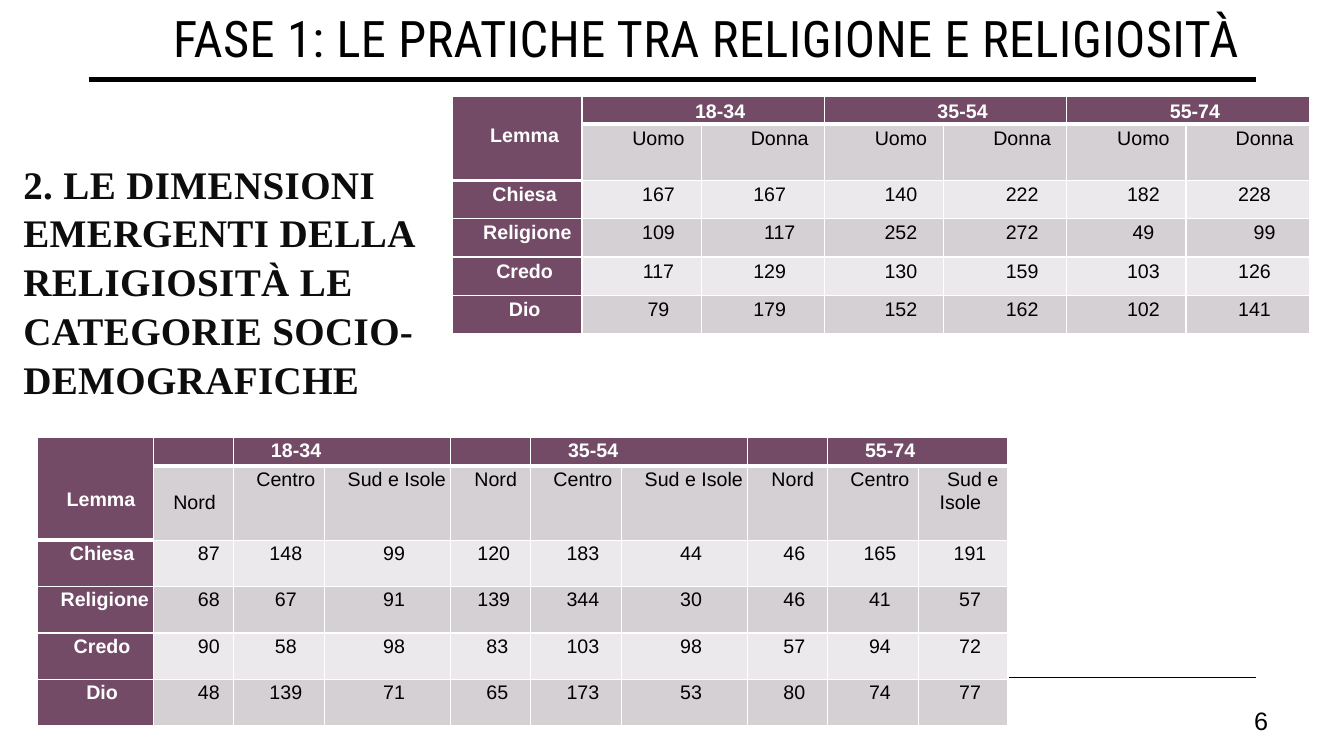
import pptx
import pptx.dml.color
import pptx.enum.shapes
import pptx.enum.text
import pptx.oxml.ns
import pptx.util
from lxml import etree

WIDTH, HEIGHT = pptx.util.Inches(13.33), pptx.util.Inches(7.5)
COLORS = {"black": "000000", "ink": "0D0D0D", "white": "FFFFFF",
          "plum": "734B67", "dark_band": "D5D0D3", "light_band": "EBE9EB"}
ALIGN = pptx.enum.text.PP_ALIGN
ANCHOR = pptx.enum.text.MSO_ANCHOR
AGES = ["18-34", "35-54", "55-74"]
LEMMAS = ["Chiesa", "Religione", "Credo", "Dio"]
GENDER_COUNTS = [[167, 167, 140, 222, 182, 228],
                 [109, 117, 252, 272, 49, 99],
                 [117, 129, 130, 159, 103, 126],
                 [79, 179, 152, 162, 102, 141]]
AREA_COUNTS = [[87, 148, 99, 120, 183, 44, 46, 165, 191],
               [68, 67, 91, 139, 344, 30, 46, 41, 57],
               [90, 58, 98, 83, 103, 98, 57, 94, 72],
               [48, 139, 71, 65, 173, 53, 80, 74, 77]]


def share(left, top, width, height):
    """Turn percentages of the slide into a box of lengths."""
    return (int(WIDTH * left / 100), int(HEIGHT * top / 100),
            int(WIDTH * width / 100), int(HEIGHT * height / 100))


def rgb(name):
    return pptx.dml.color.RGBColor.from_string(COLORS[name])


def write_text(frame, text, size=14, font="Arial", color="black", bold=False,
               align=ALIGN.LEFT, anchor=ANCHOR.TOP, spacing=None, tracking=0,
               indent=None, after=None):
    frame.word_wrap = True
    frame.vertical_anchor = anchor
    para = frame.paragraphs[0]
    para.alignment = align
    if spacing:
        para.line_spacing = spacing
    if after is not None:
        para.space_after = pptx.util.Pt(after)
    if indent is not None:
        properties = para._p.get_or_add_pPr()
        properties.set("marL", str(pptx.util.Inches(indent)))
        properties.set("indent", str(pptx.util.Inches(0.19)))
    if not text:
        para._p.get_or_add_endParaRPr().set("sz", str(size * 100))
        return
    span = para.add_run()
    span.text = text
    span.font.size = pptx.util.Pt(size)
    span.font.name = font
    span.font.bold = bold
    span.font.color.rgb = rgb(color)
    if tracking:
        span._r.get_or_add_rPr().set("spc", str(int(tracking * 100)))


def add_rule(page, box, weight):
    left, top, width, height = box
    rule = page.shapes.add_connector(pptx.enum.shapes.MSO_CONNECTOR.STRAIGHT,
                                     left, top, left + width, top + height)
    rule.line.color.rgb = rgb("black")
    rule.line.width = pptx.util.Pt(weight)
    etree.SubElement(rule._element.spPr, pptx.oxml.ns.qn("a:effectLst"))


def add_label(page, box, text, **style):
    label = page.shapes.add_textbox(*box)
    write_text(label.text_frame, text, **style)


def add_title(page, box, text, **style):
    title = page.shapes.title
    title.left, title.top, title.width, title.height = box
    write_text(title.text_frame, text, **style)


def style_cell(cell, fill, margins, bottom=1):
    properties = cell._tc.get_or_add_tcPr()
    for side, weight in (("L", 1), ("R", 1), ("T", 1), ("B", bottom)):
        border = etree.SubElement(properties, pptx.oxml.ns.qn("a:ln" + side),
                                  w=str(pptx.util.Pt(weight)))
        solid = etree.SubElement(border, pptx.oxml.ns.qn("a:solidFill"))
        etree.SubElement(solid, pptx.oxml.ns.qn("a:srgbClr"), val=COLORS["white"])
    cell.fill.solid()
    cell.fill.fore_color.rgb = rgb(fill)
    cell.margin_left, cell.margin_top, cell.margin_right, cell.margin_bottom = (
        pptx.util.Inches(margin) for margin in margins)


def add_count_table(page, box, columns, rows, texts, margins, age_starts,
                    lemma_top, place_text):
    """Lay out a table; place_text(row, column) gives indent and alignment."""
    frame = page.shapes.add_table(len(rows), len(columns), *box)
    table = frame.table
    table.first_row = table.horz_banding = False
    for parts, weights, side, length in ((table.columns, columns, "width", box[2]),
                                         (table.rows, rows, "height", box[3])):
        for part, weight in zip(parts, weights):
            setattr(part, side, int(length * weight / sum(weights)))

    # Two-row lemma heading and two-column age headings
    table.cell(0, 0).merge(table.cell(1, 0))
    for start in age_starts:
        table.cell(0, start).merge(table.cell(0, start + 1))

    for row, line in enumerate(texts):
        for column, text in enumerate(line):
            cell = table.cell(row, column)
            heading = row == 0 or column == 0
            band = "light_band" if row % 2 == 0 else "dark_band"
            lemma_heading = column == 0 and row < 2
            style_cell(cell, "plum" if heading else band, margins,
                       bottom=3 if row == 0 or lemma_heading else 1)
            if cell.is_spanned:
                continue
            indent, align = place_text(row, column)
            write_text(cell.text_frame, text, bold=heading, align=align,
                       color="white" if heading else "black",
                       indent=indent, spacing=1.07, after=0.2)
    table.cell(0, 0).margin_top = pptx.util.Inches(lemma_top)


def add_gender_table(page, box):
    heads = ["Lemma "] + [text for age in AGES for text in (age + " ", "")]
    groups = [""] + ["Uomo ", "Donna "] * 3
    body = [[f"{text} " for text in [lemma, *counts]]
            for lemma, counts in zip(LEMMAS, GENDER_COUNTS)]

    def place_text(row, column):
        if column == 0:
            return 0.01, ALIGN.CENTER
        flush = (row, column) == (0, 5) or (row in (2, 4, 5) and column in (2, 6))
        return 0 if flush else 0.2, ALIGN.CENTER

    add_count_table(page, box, [1.28] + [1.18, 1.22] * 3, [0.24, 0.56] + [0.38] * 4,
                    [heads, groups, *body], (0.08, 0.02, 0.08, 0), (1, 3, 5),
                    0.26, place_text)


def add_area_table(page, box):
    heads = ["Lemma"] + [text for age in AGES for text in ("", age, "")]
    groups = ["", " Nord "] + ["Centro ", "Sud e Isole ", "Nord "] * 2
    groups += ["Centro ", "Sud e Isole "]
    body = [[f"{lemma} ", f" {counts[0]}"] + [f"{count} " for count in counts[1:]]
            for lemma, counts in zip(LEMMAS, AREA_COUNTS)]

    def place_text(row, column):
        if row == 0:
            return 0.1 if column == 0 else 0.18, ALIGN.LEFT
        if row == 1 and column in (4, 7):
            return 0.05, ALIGN.JUSTIFY
        if column == 1:
            return 0.2, ALIGN.JUSTIFY if row == 1 else ALIGN.LEFT
        if column == 4 and row in (2, 3):
            return 0.08, ALIGN.LEFT
        return 0.02, ALIGN.CENTER

    add_count_table(page, box, [1.15] + [0.8, 0.9, 1.25] * 2 + [0.8, 0.9, 0.89],
                    [0.28, 0.72] + [0.46] * 4, [heads, groups, *body],
                    (0, 0.01, 0.02, 0), (2, 5, 8), 0.49, place_text)


def main():
    deck = pptx.Presentation()
    deck.slide_width, deck.slide_height = WIDTH, HEIGHT
    page = deck.slides.add_slide(deck.slide_layouts[5])

    # Rules above and below the content
    add_rule(page, share(6.6, 10.53, 86.85, 0), 3.5)
    add_rule(page, share(6.6, 89.6, 86.85, 0), 1)

    # Headings
    add_title(page, share(0.98, 20.27, 30.83, 27.33),
              "2. LE DIMENSIONI EMERGENTI DELLA RELIGIOSITÀ LE CATEGORIE "
              "SOCIO-DEMOGRAFICHE", size=27.9, font="Times New Roman",
              color="ink", bold=True, spacing=1.04, tracking=0.3)
    add_label(page, share(12.15, 0, 87.85, 9.87),
              "FASE 1: LE PRATICHE TRA RELIGIONE E RELIGIOSITÀ", size=36,
              font="Roboto Condensed", anchor=ANCHOR.MIDDLE, tracking=0.3)

    # Tables by gender and by area
    add_gender_table(page, share(33.68, 12.8, 63.75, 30.93))
    add_area_table(page, share(2.78, 57.87, 72.23, 37.87))

    # Page number
    add_label(page, share(89.55, 92.67, 5.55, 5.33), "6", size=18,
              align=ALIGN.RIGHT, anchor=ANCHOR.MIDDLE)
    deck.save("out.pptx")


if __name__ == "__main__":
    main()
